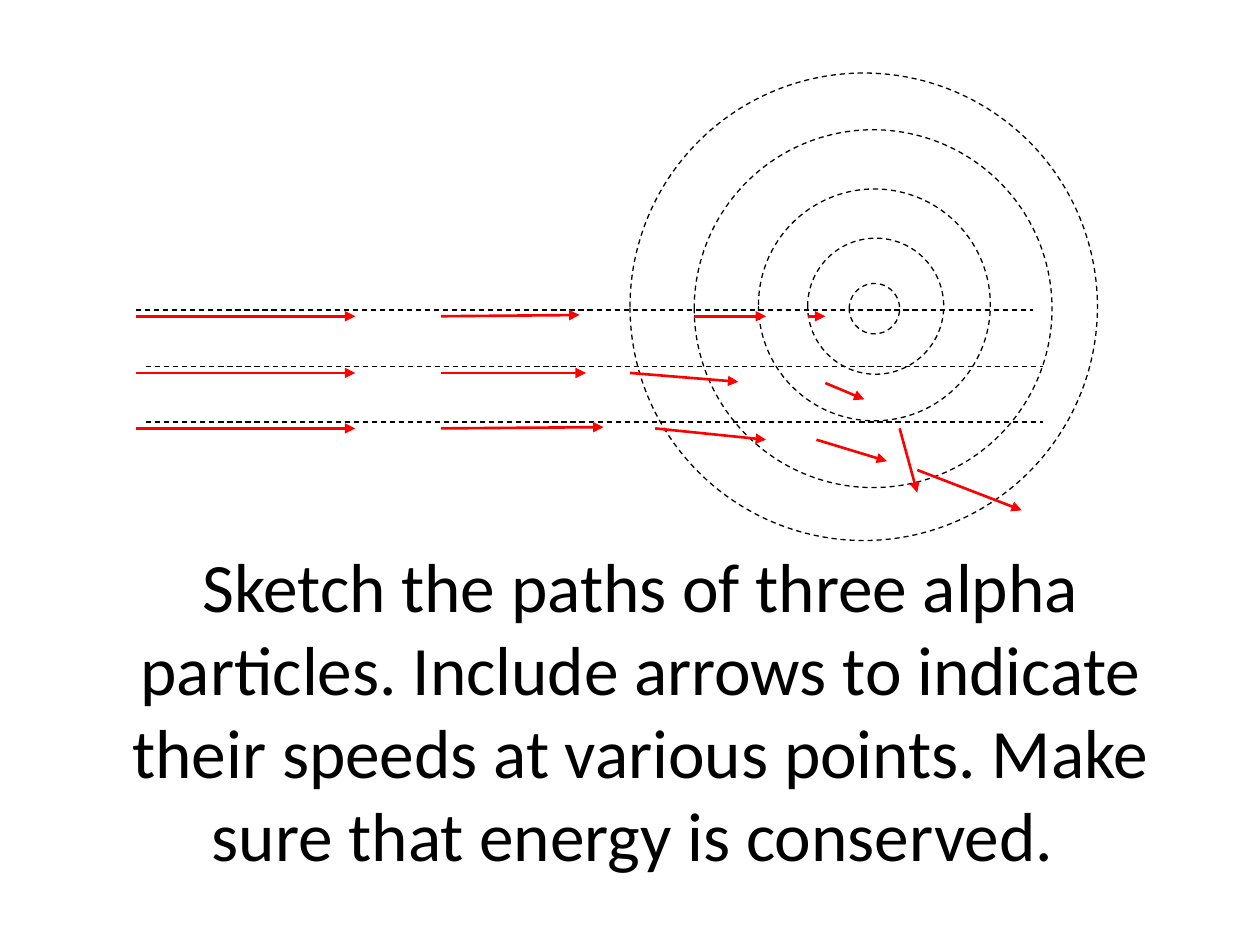
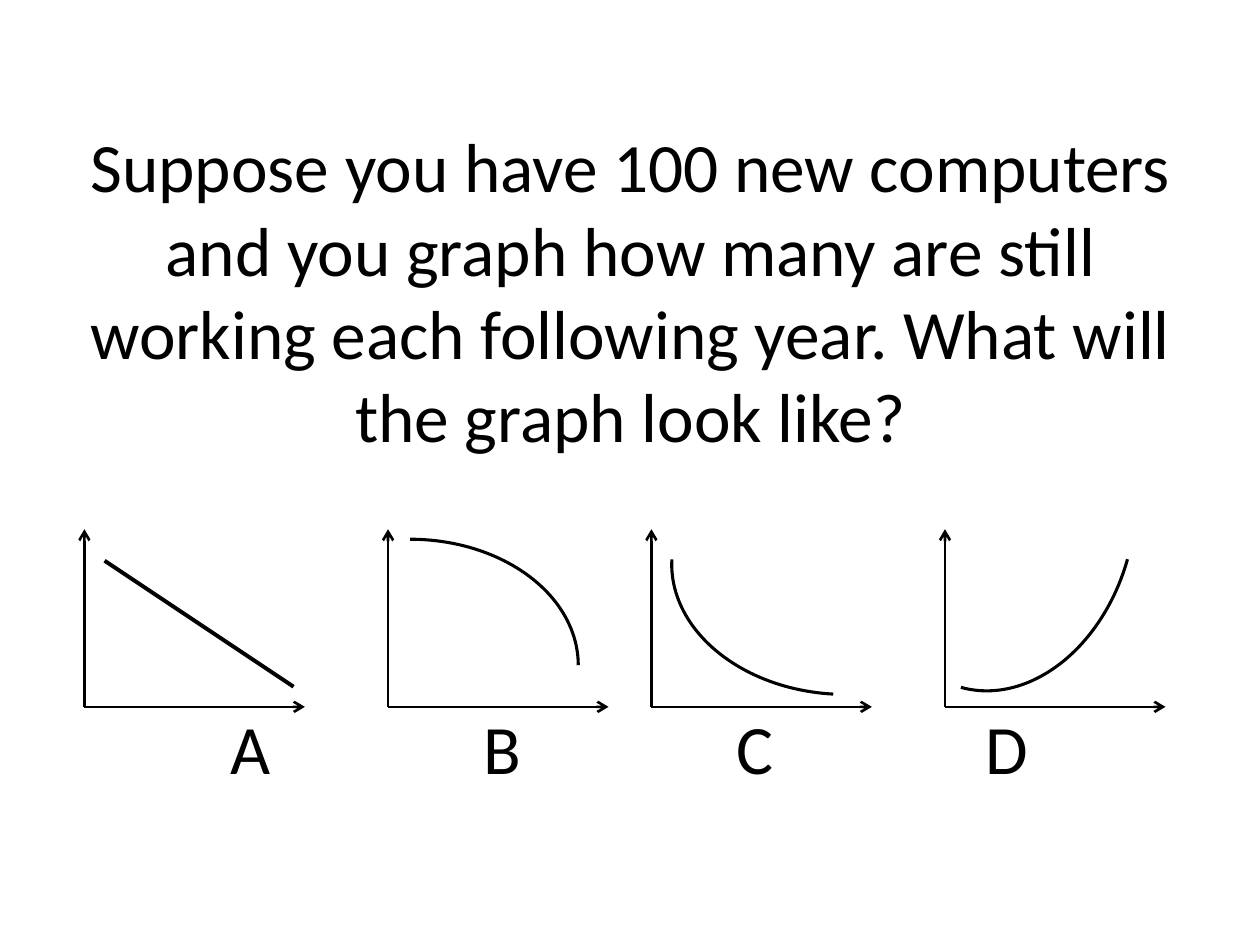
from lxml.etree import SubElement
from pptx import Presentation
from pptx.dml.color import RGBColor
from pptx.enum.dml import MSO_LINE
from pptx.enum.shapes import MSO_CONNECTOR, MSO_SHAPE
from pptx.enum.text import MSO_ANCHOR, MSO_AUTO_SIZE, PP_ALIGN
from pptx.oxml.ns import qn
from pptx.util import Emu, Pt

COLORS = {"ink": "000000", "velocity": "FF0000", "page": "FFFFFF"}
FONT = "Calibri"
TITLE_SIZE = 39.6
LINE_PITCH = 47.5
SCALE = 9144


def px(length):
    """Turn px, at 100 to the inch, into EMU."""
    return Emu(length * SCALE)


def color(name):
    """Return a named colour."""
    return RGBColor.from_string(COLORS[name])


class SlideBuilder:
    """Hold the shared style and draw on the current slide."""

    def __init__(self, presentation):
        """Start with no slide."""
        self.presentation = presentation
        self.slide = None

    def new_slide(self):
        """Add a slide that has only a title placeholder."""
        self.slide = self.presentation.slides.add_slide(self.presentation.slide_layouts[0])
        subtitle = self.slide.placeholders[1].element
        subtitle.getparent().remove(subtitle)
        self.slide.background.fill.solid()
        self.slide.background.fill.fore_color.rgb = color("page")

    def add_run(self, paragraph, text):
        """Add a run in the title style."""
        run = paragraph.add_run()
        run.text = text
        run.font.name = FONT
        run.font.size = Pt(TITLE_SIZE)
        run.font.color.rgb = color("ink")

    def title(self, text, left, top, width, height):
        """Place the title and return its text frame."""
        shape = self.slide.shapes.title
        shape.left, shape.top, shape.width, shape.height = map(px, (left, top, width, height))
        frame = shape.text_frame
        frame.word_wrap = True
        frame.auto_size = MSO_AUTO_SIZE.NONE
        frame.vertical_anchor = MSO_ANCHOR.MIDDLE
        paragraph = frame.paragraphs[0]
        paragraph.alignment = PP_ALIGN.CENTER
        self.add_run(paragraph, text)
        return frame

    def choices(self, frame, labels, first, step):
        """Add a row of answer letters centred on equal tab stops."""
        paragraph = frame.add_paragraph()
        paragraph.alignment = PP_ALIGN.LEFT
        paragraph.space_before = Pt(3 * LINE_PITCH)
        self.add_run(paragraph, "".join("\t" + label for label in labels))
        tab_list = SubElement(paragraph._p.get_or_add_pPr(), qn("a:tabLst"))
        for index in range(len(labels)):
            position = px(first + index * step)
            SubElement(tab_list, qn("a:tab"), pos=str(position), algn="ctr")

    def outline(self, line, width, ink="ink", dashed=False):
        """Style a line."""
        line.color.rgb = color(ink)
        line.width = Pt(width)
        if dashed:
            line.dash_style = MSO_LINE.DASH

    def line(self, start, end, width, ink="ink", dashed=False, arrow=None):
        """Draw a straight line, with an arrowhead at its end if named."""
        connector = self.slide.shapes.add_connector(
            MSO_CONNECTOR.STRAIGHT, *map(px, (*start, *end)))
        self.outline(connector.line, width, ink, dashed)
        properties = connector.element.spPr
        if arrow:
            SubElement(properties.find(qn("a:ln")), qn("a:tailEnd"), type=arrow)
        SubElement(properties, qn("a:effectLst"))

    def curve(self, kind, left, top, width, height, weight, dashed=False, rotation=0):
        """Draw an unfilled ellipse or arc."""
        shape = self.slide.shapes.add_shape(kind, *map(px, (left, top, width, height)))
        shape.shadow.inherit = False
        shape.fill.background()
        shape.rotation = rotation
        self.outline(shape.line, weight, dashed=dashed)


def build_alpha_paths(builder):
    """Build the slide on alpha particles near a nucleus."""
    builder.new_slide()
    frame = builder.title(
        "Sketch the paths of three alpha particles. Include arrows to indicate their speeds "
        "at various points. Make sure that energy is conserved. ", 50, 492, 917, 208)
    frame.margin_bottom = px(5) + Pt(LINE_PITCH)

    equipotentials = [(641, 189, 108), (602, 150, 184), (674, 225, 40),
                      (551, 103, 284), (500, 58, 371)]
    for left, top, diameter in equipotentials:
        builder.curve(MSO_SHAPE.OVAL, left, top, diameter, diameter, 0.75, dashed=True)
    for left, y in [(116, 335), (116, 291), (108, 246)]:
        builder.line((left, y), (left + 712, y), 0.75, dashed=True)

    velocities = {
        251: [(460, 250), (551, 251, 608, 251), (641, 251, 655, 251)],
        340: [(479, 339), (520, 340, 608, 349), (648, 349, 704, 366), (728, 373, 811, 405)],
        296: [(465, 296), (500, 296, 586, 303), (714, 340, 728, 391), (655, 304, 686, 317)],
    }
    for y, (second_tip, *later) in velocities.items():
        arrows = [(108, y, 282, y), (350, y, *second_tip), *later]
        for x1, y1, x2, y2 in arrows:
            builder.line((x1, y1), (x2, y2), 1.5, "velocity", arrow="triangle")


def build_computer_decay(builder):
    """Build the slide with four candidate graphs."""
    builder.new_slide()
    frame = builder.title(
        "Suppose you have 100 new computers and you graph how many are still working each "
        "following year. What will the graph look like?", 42, 33, 917, 658)
    builder.choices(frame, "ABCD", 147, 200)

    for x in (67, 308, 517, 750):
        for tip in [(x, 420), (x + 175, 561)]:
            builder.line((x, 561), tip, 1.5, arrow="arrow")
    builder.line((83, 445), (233, 545), 2.25)
    for left, top, rotation in [(192, 428, 0), (533, 351, 183), (665, 317, 105.6)]:
        builder.curve(MSO_SHAPE.ARC, left, top, 267, 200, 1.75, rotation=rotation)


def main():
    """Build and save the presentation."""
    presentation = Presentation()
    presentation.slide_width, presentation.slide_height = px(1000), px(750)
    builder = SlideBuilder(presentation)
    build_alpha_paths(builder)
    build_computer_decay(builder)
    presentation.save("out.pptx")


if __name__ == "__main__":
    main()
